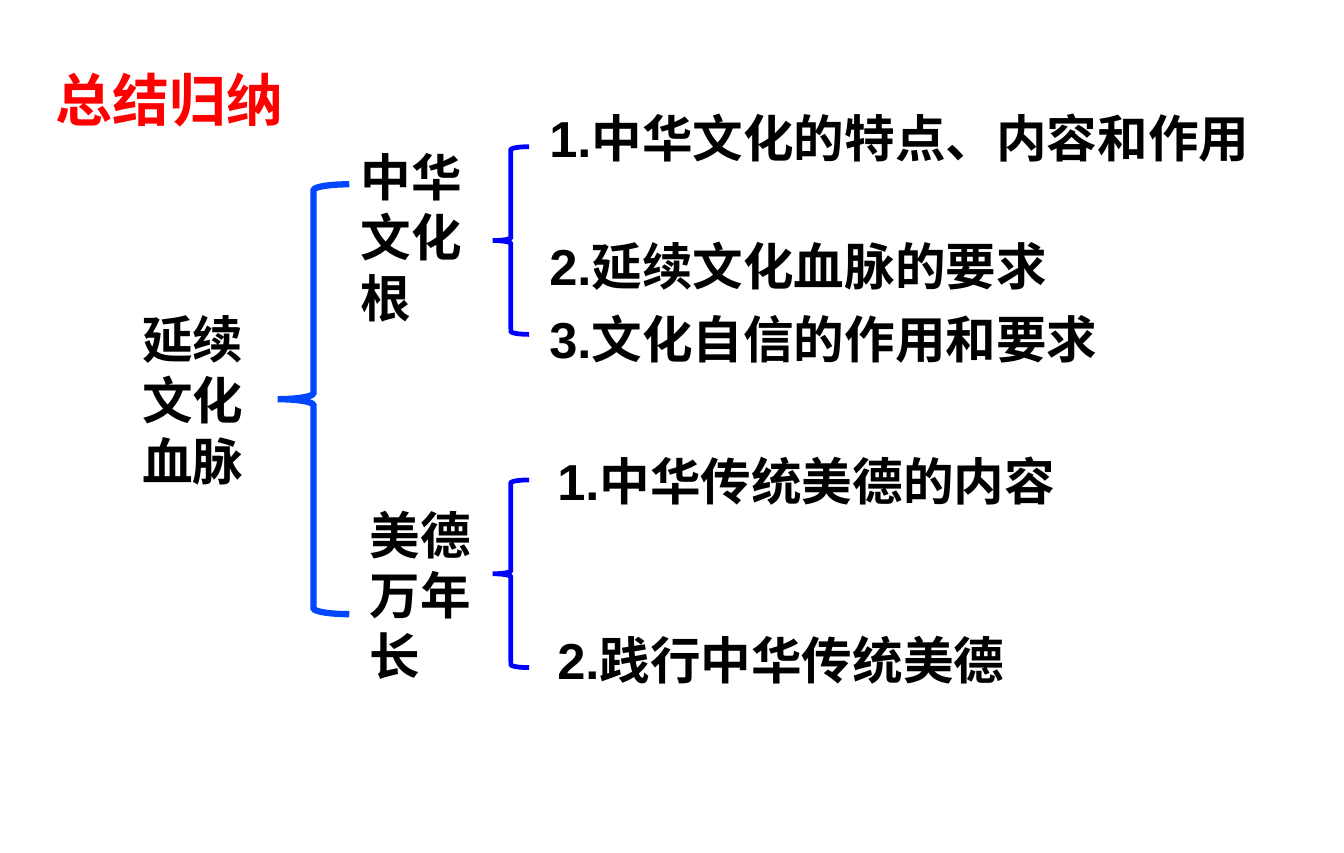
from pptx import Presentation
from pptx import util as u
from pptx.dml import color
from pptx.enum import shapes, text
from pptx.oxml import ns
from lxml import etree

RED, BLACK = "FF0000", "000000"
BRIGHT_BLUE, BLUE = "0047FF", "0000FF"


def rgb(value):
    return color.RGBColor.from_string(value)


class SummarySlide:
    """Holds the text style and the slide being built."""

    font = "Arial"

    def __init__(self, presentation):
        self.slide = presentation.slides.add_slide(presentation.slide_layouts[6])

    def label(self, words, left, top, width, height=0.64, size=32, fill=BLACK):
        box = self.slide.shapes.add_textbox(*map(u.Inches, (left, top, width, height)))
        frame = box.text_frame
        frame.word_wrap = True
        frame.auto_size = text.MSO_AUTO_SIZE.SHAPE_TO_FIT_TEXT
        frame.text = words
        font = frame.paragraphs[0].runs[0].font
        font.name, font.size, font.bold = self.font, u.Pt(size), True
        font.color.rgb = rgb(fill)

    def brace(self, left, top, width, height, line, weight):
        shape = self.slide.shapes.add_shape(
            shapes.MSO_SHAPE.LEFT_BRACE, *map(u.Inches, (left, top, width, height)))
        shape.shadow.inherit = False
        shape.fill.background()
        shape.line.color.rgb = rgb(line)
        shape.line.width = u.Pt(weight)
        # Sharp corners
        outline = shape.element.spPr.find(ns.qn("a:ln"))
        etree.SubElement(outline, ns.qn("a:miter"), lim="800000")


def main():
    presentation = Presentation()
    presentation.slide_width = u.Pt(850.5)  # 11 13/16 inches
    presentation.slide_height = u.Inches(7.5)
    summary = SummarySlide(presentation)

    # Title and root topic
    summary.label("总结归纳", 0.39, 0.52, 3.47, 0.71, size=36, fill=RED)
    summary.label("延续文化血脉", 1.15, 2.66, 1.29, 1.72)
    summary.brace(2.44, 1.62, 0.63, 3.78, BRIGHT_BLUE, 4)

    # Branches: name, left, top, brace top, left of points, (point, top, width)
    branches = [
        ("中华文化根", 3.07, 1.23, 1.29, 4.73, [
            ("中华文化的特点、内容和作用", 0.89, 6.58),
            ("延续文化血脉的要求", 2.02, 4.8),
            ("文化自信的作用和要求", 2.66, 5.54)]),
        ("美德万年长", 3.15, 4.38, 4.22, 4.8, [
            ("中华传统美德的内容", 3.91, 4.73),
            ("践行中华传统美德", 5.48, 4.73)]),
    ]
    for name, left, top, brace_top, points_left, points in branches:
        summary.label(name, left, top, 1.18, 1.72)
        summary.brace(4.33, brace_top, 0.32, 1.65, BLUE, 3)
        for number, (point, point_top, width) in enumerate(points, 1):
            summary.label(f"{number}.{point}", points_left, point_top, width)

    presentation.save("out.pptx")


if __name__ == "__main__":
    main()
